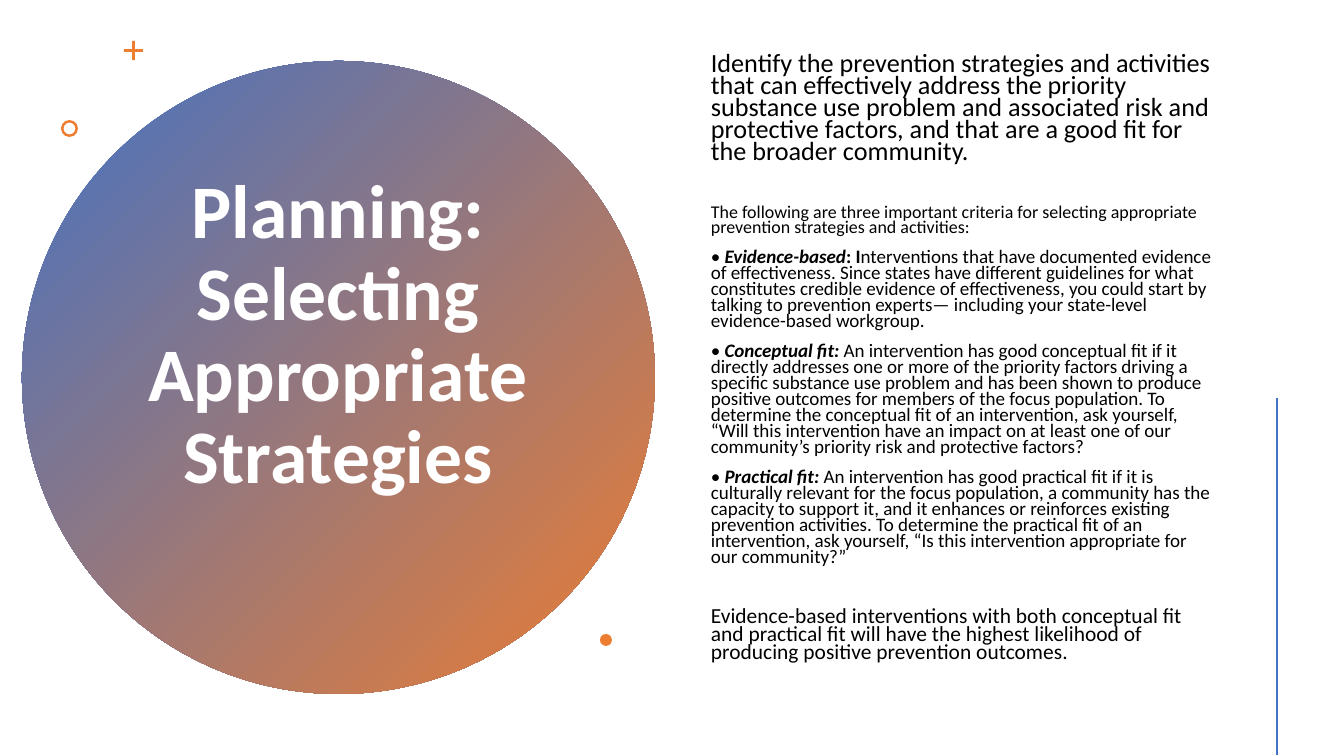
from pptx import Presentation
from pptx.dml.color import RGBColor
from pptx.enum.shapes import MSO_CONNECTOR, MSO_SHAPE
from pptx.enum.text import MSO_ANCHOR, PP_ALIGN
from pptx.oxml.ns import qn
from pptx.util import Pt
from lxml.etree import SubElement

PX = 9071
THEME = {
    "font": "Calibri",
    "blue": RGBColor(0x44, 0x72, 0xC4),
    "orange": RGBColor(0xED, 0x7D, 0x31),
    "white": RGBColor(255, 255, 255),
    "black": RGBColor(0, 0, 0),
    "title": 54, "lead": 18.7, "intro": 12.8, "criterion": 13.6, "closing": 15.3,
}


def add_text(left, top, width, height):
    tf = s.shapes.add_textbox(left * PX, top * PX, width * PX, height * PX).text_frame
    tf.word_wrap = True
    return tf


def style(r, size, color, bold=False, italic=False):
    r.font.name = THEME["font"]
    r.font.size = Pt(size)
    r.font.color.rgb = color
    r.font.bold = bold
    r.font.italic = italic


prs = Presentation()
prs.slide_width = 1344 * PX
prs.slide_height = 756 * PX
s = prs.slides.add_slide(prs.slide_layouts[6])

circle = s.shapes.add_shape(MSO_SHAPE.OVAL, 22 * PX, 61 * PX, 633 * PX, 633 * PX)
circle.shadow.inherit = False
circle.line.fill.background()
circle.fill.gradient()
circle.fill.gradient_angle = 315
for stop, position, color in zip(circle.fill.gradient_stops, (0, 1), ("blue", "orange")):
    stop.position = position
    stop.color.rgb = THEME[color]

ACCENTS = [
    (MSO_SHAPE.CROSS, 124, 41, 19, 0.43),
    (MSO_SHAPE.DONUT, 61, 120, 17, 0.15),
    (MSO_SHAPE.OVAL, 600, 634, 12, None),
]
for kind, left, top, size, adjust in ACCENTS:
    sp = s.shapes.add_shape(kind, left * PX, top * PX, size * PX, size * PX)
    sp.shadow.inherit = False
    sp.fill.solid()
    sp.fill.fore_color.rgb = THEME["orange"]
    sp.line.fill.background()
    if adjust is not None:
        sp.adjustments[0] = adjust

tf = add_text(137, 142, 402, 389)
tf.vertical_anchor = MSO_ANCHOR.MIDDLE
p = tf.paragraphs[0]
p.text = "Planning: Selecting Appropriate Strategies"
p.alignment = PP_ALIGN.CENTER
p.line_spacing = 0.9
style(p.runs[0], THEME["title"], THEME["white"], bold=True)

PARAGRAPHS = [
    ("lead", 0, "", "", "Identify the prevention strategies and activities that can effectively address the priority substance use problem and associated risk and protective factors, and that are a good fit for the broader community."),
    ("intro", 30, "", "", "The following are three important criteria for selecting appropriate prevention strategies and activities:"),
    ("criterion", 10, "• Evidence-based", ": I", "nterventions that have documented evidence of effectiveness. Since states have different guidelines for what constitutes credible evidence of effectiveness, you could start by talking to prevention experts— including your state-level evidence-based workgroup."),
    ("criterion", 10, "• Conceptual fit: ", "", "An intervention has good conceptual fit if it directly addresses one or more of the priority factors driving a specific substance use problem and has been shown to produce positive outcomes for members of the focus population. To determine the conceptual fit of an intervention, ask yourself, “Will this intervention have an impact on at least one of our community’s priority risk and protective factors?"),
    ("criterion", 10, "• Practical fit: ", "", "An intervention has good practical fit if it is culturally relevant for the focus population, a community has the capacity to support it, and it enhances or reinforces existing prevention activities. To determine the practical fit of an intervention, ask yourself, “Is this intervention appropriate for our community?”"),
    ("closing", 30, "", "", "Evidence-based interventions with both conceptual fit and practical fit will have the highest likelihood of producing positive prevention outcomes."),
]
tf = add_text(701, 50, 526, 620)
for i, (level, before, term, link, body) in enumerate(PARAGRAPHS):
    p = tf.add_paragraph() if i else tf.paragraphs[0]
    p.line_spacing = 0.7
    p.space_before = Pt(before)
    bullet, name = term[:2], term[2:]
    for text, bold, italic in ((bullet, False, False), (name, True, True), (link, True, False), (body, False, False)):
        if text:
            r = p.add_run()
            r.text = text
            style(r, THEME[level], THEME["black"], bold, italic)

line = s.shapes.add_connector(MSO_CONNECTOR.STRAIGHT, 1277 * PX, 398 * PX, 1277 * PX, 755 * PX)
line.line.color.rgb = THEME["blue"]
line.line.width = Pt(2)
SubElement(line._element.spPr, qn("a:effectLst"))

prs.save("out.pptx")
